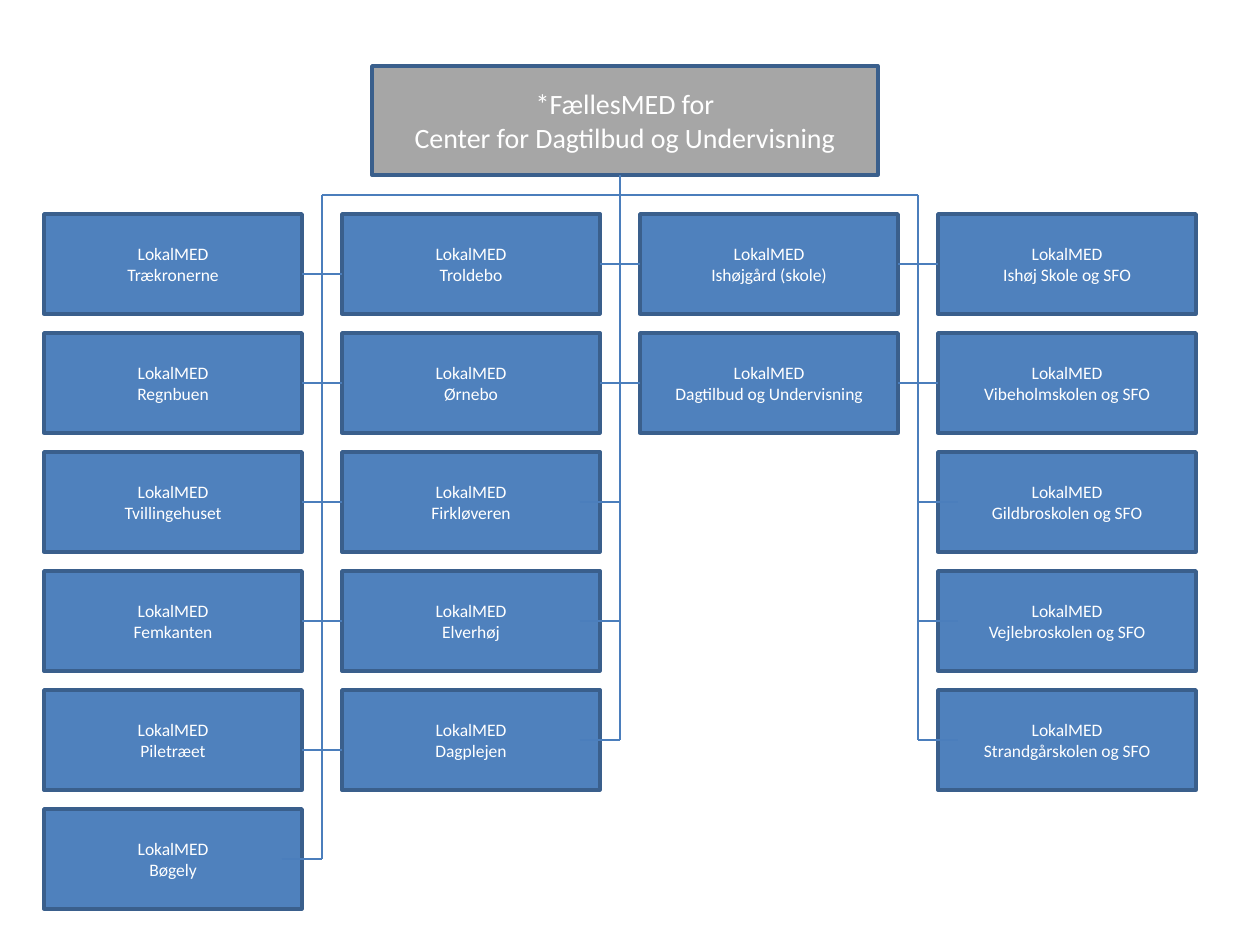
from lxml.etree import SubElement
from pptx import Presentation
from pptx.dml.color import RGBColor
from pptx.enum.shapes import MSO_CONNECTOR as Connector, MSO_SHAPE as Shape
from pptx.enum.text import MSO_ANCHOR as Anchor, PP_ALIGN as Align
from pptx.oxml.ns import qn
from pptx.util import Pt

HEADER = ["*FællesMED for", "Center for Dagtilbud og Undervisning"]
UNIT_TITLE = "LokalMED"
COLUMNS = [
    ["Trækronerne", "Regnbuen", "Tvillingehuset", "Femkanten", "Piletræet", "Bøgely"],
    ["Troldebo", "Ørnebo", "Firkløveren", "Elverhøj", "Dagplejen"],
    ["Ishøjgård (skole)", "Dagtilbud og Undervisning"],
    ["Ishøj Skole og SFO", "Vibeholmskolen og SFO", "Gildbroskolen og SFO",
     "Vejlebroskolen og SFO", "Strandgårskolen og SFO"],
]

GREY = RGBColor(0xA6, 0xA6, 0xA6)
BLUE = RGBColor(0x4F, 0x81, 0xBD)
BORDER = RGBColor(0x3A, 0x5F, 0x8C)
LINE = RGBColor(0x4B, 0x7E, 0xBC)
WHITE = RGBColor(0xFF, 0xFF, 0xFF)

PX = 914400 / 126
HEADER_BOX = (372, 66, 506, 109)
LEFT, TOP, WIDTH, HEIGHT = 44, 214, 258, 100
COLUMN_STEP, ROW_STEP = 298, 119
BUS_Y = 195
STUB = 20
LOWERED = {(0, 0): 10, (0, 4): 10}


def px(*values):
    return [round(value * PX) for value in values]


def add_box(slide, box, lines, fill, size):
    shape = slide.shapes.add_shape(Shape.RECTANGLE, *px(*box))
    shape.shadow.inherit = False
    shape.fill.solid()
    shape.fill.fore_color.rgb = fill
    shape.line.color.rgb = BORDER
    shape.line.width = Pt(2)
    frame = shape.text_frame
    frame.word_wrap = True
    frame.vertical_anchor = Anchor.MIDDLE
    frame.text = "\n".join(lines)
    font_format = {"name": "Calibri", "size": Pt(size)}
    for paragraph in frame.paragraphs:
        paragraph.alignment = Align.CENTER
        font = paragraph.runs[0].font
        for name, value in font_format.items():
            setattr(font, name, value)
        font.color.rgb = WHITE


def add_line(slide, *ends):
    connector = slide.shapes.add_connector(Connector.STRAIGHT, *px(*ends))
    connector.line.color.rgb = LINE
    connector.line.width = Pt(0.75)
    SubElement(connector._element.spPr, qn("a:effectLst"))


def row_middle(row):
    return TOP + row * ROW_STEP + HEIGHT // 2


def main():
    presentation = Presentation()
    presentation.slide_width, presentation.slide_height = px(1260, 945)
    slide = presentation.slides.add_slide(presentation.slide_layouts[6])

    add_box(slide, HEADER_BOX, HEADER, GREY, 16)
    for column, names in enumerate(COLUMNS):
        for row, name in enumerate(names):
            box = (LEFT + column * COLUMN_STEP, TOP + row * ROW_STEP, WIDTH, HEIGHT)
            add_box(slide, box, [UNIT_TITLE, name], BLUE, 10)

    trunks = [LEFT + WIDTH + STUB + gap * COLUMN_STEP for gap in range(len(COLUMNS) - 1)]
    add_line(slide, trunks[1], HEADER_BOX[1] + HEADER_BOX[3], trunks[1], BUS_Y)
    add_line(slide, trunks[0], BUS_Y, trunks[-1], BUS_Y)

    for gap, (x, left, right) in enumerate(zip(trunks, COLUMNS, COLUMNS[1:])):
        rows = max(len(left), len(right))
        add_line(slide, x, BUS_Y, x, row_middle(rows - 1))
        for row in range(rows):
            y = row_middle(row) + LOWERED.get((gap, row), 0)
            if row >= len(right):
                start = x - 2 * STUB
            elif row >= len(left):
                start = x
            else:
                start = x - STUB
            add_line(slide, start, y, start + 2 * STUB, y)

    presentation.save("out.pptx")


if __name__ == "__main__":
    main()
